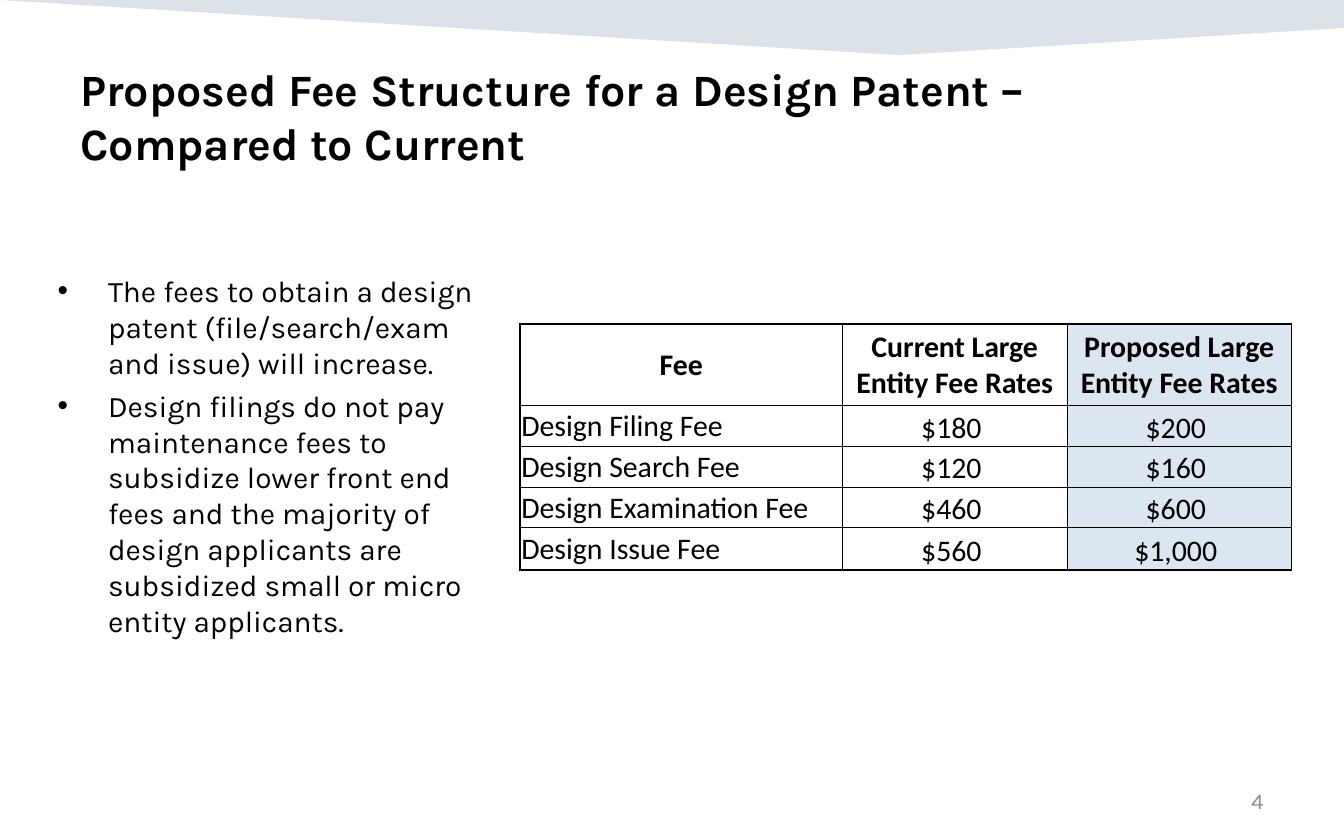
from lxml import etree
from pptx import Presentation
from pptx.dml.color import RGBColor
from pptx.enum.text import MSO_ANCHOR, PP_ALIGN
from pptx.oxml.ns import qn
from pptx.util import Pt

LEFT, CENTER, RIGHT = PP_ALIGN.LEFT, PP_ALIGN.CENTER, PP_ALIGN.RIGHT
TOP, MIDDLE, BOTTOM = MSO_ANCHOR.TOP, MSO_ANCHOR.MIDDLE, MSO_ANCHOR.BOTTOM

SLIDE_WIDTH, SLIDE_HEIGHT = 720, 450
BLACK, WHITE, GRAY, NAVY, PALE_BLUE = "000000", "FFFFFF", "8C8C8C", "164469", "DCE6F1"
TITLE_FORMAT = {"name": "Karla", "size": Pt(24), "bold": True}
BODY_FORMAT = {"name": "Karla", "size": Pt(16), "bold": False}
NUMBER_FORMAT = {"name": "Karla", "size": Pt(12), "bold": False}
HEADER_FORMAT = {"name": "Calibri", "size": Pt(16), "bold": True}
CELL_FORMAT = {**HEADER_FORMAT, "bold": False}

TITLE = "Proposed Fee Structure for a Design Patent – \vCompared to Current"
POINTS = [
    "The fees to obtain a design patent (file/search/exam and issue) will increase.",
    "Design filings do not pay maintenance fees to subsidize lower front end fees "
    "and the majority of design applicants are subsidized small or micro entity applicants.",
]
FEES = [
    ("Fee", "Current Large Entity Fee Rates", "Proposed Large Entity Fee Rates"),
    ("Design Filing Fee", "$180 ", "$200 "),
    ("Design Search Fee", "$120 ", "$160 "),
    ("Design Examination Fee", "$460 ", "$600 "),
    ("Design Issue Fee", "$560 ", "$1,000 "),
]
COLUMN_WIDTHS = [172.8, 120.24, 120.24]
ROW_HEIGHTS = [43.6, 21.9, 21.9, 21.9, 22.5]


def color(hex_value):
    return RGBColor.from_string(hex_value)


def format_paragraph(paragraph, text, font_format, font_color, align):
    paragraph.text = text
    paragraph.alignment = align
    for name, value in font_format.items():
        setattr(paragraph.font, name, value)
    paragraph.font.color.rgb = color(font_color)


def add_bullet(paragraph, indent):
    properties = paragraph._p.get_or_add_pPr()
    properties.set("marL", str(Pt(indent)))
    properties.set("indent", str(-Pt(indent)))
    etree.SubElement(properties, qn("a:buFont"), typeface="Arial")
    etree.SubElement(properties, qn("a:buChar"), char="•")


def add_text(slide, box, texts, font_format, font_color=BLACK, align=LEFT,
             anchor=TOP, bulleted=False):
    frame = slide.shapes.add_textbox(*map(Pt, box)).text_frame
    frame.word_wrap = True
    frame.vertical_anchor = anchor
    for index, text in enumerate(texts):
        paragraph = frame.add_paragraph() if index else frame.paragraphs[0]
        if index:
            paragraph.space_before = Pt(3.8)
        if bulleted:
            add_bullet(paragraph, 27)
        format_paragraph(paragraph, text, font_format, font_color, align)


def add_top_band(slide):
    builder = slide.shapes.build_freeform(0, 0)
    corners = [(SLIDE_WIDTH, 0), (SLIDE_WIDTH, 15), (481.5, 29.5)]
    builder.add_line_segments([(Pt(x), Pt(y)) for x, y in corners], close=True)
    band = builder.convert_to_shape()
    band.shadow.inherit = False
    band.line.fill.background()
    band.fill.solid()
    band.fill.fore_color.rgb = color(NAVY)
    navy = band.fill._xPr.find(".//" + qn("a:srgbClr"))
    etree.SubElement(navy, qn("a:alpha"), val="15000")


def set_borders(cell, widths):
    properties = cell._tc.get_or_add_tcPr()
    for position, (side, width) in enumerate(widths.items()):
        line = etree.Element(qn(f"a:ln{side}"), w=str(Pt(width)))
        fill = etree.SubElement(line, qn("a:solidFill"))
        etree.SubElement(fill, qn("a:srgbClr"), val=BLACK)
        properties.insert(position, line)


def fill_fee_cell(cell, text, row, column):
    is_header, is_label = row == 0, column == 0
    margins = {"margin_left": 0.72, "margin_right": 0.72, "margin_top": 0.72,
               "margin_bottom": 0}
    for name, value in margins.items():
        setattr(cell, name, Pt(value))
    cell.vertical_anchor = MIDDLE if is_header or is_label else BOTTOM
    format_paragraph(cell.text_frame.paragraphs[0], text,
                     HEADER_FORMAT if is_header else CELL_FORMAT, BLACK,
                     LEFT if is_label and not is_header else CENTER)
    cell.fill.solid()
    cell.fill.fore_color.rgb = color(PALE_BLUE if column == 2 else WHITE)
    # Outer edges are twice as thick as the inner grid
    outer = {"L": is_label, "R": column == len(COLUMN_WIDTHS) - 1,
             "T": is_header, "B": row == len(FEES) - 1}
    set_borders(cell, {side: 1 if edge else 0.5 for side, edge in outer.items()})


def add_fee_table(slide, left, top):
    size = sum(COLUMN_WIDTHS), sum(ROW_HEIGHTS)
    table = slide.shapes.add_table(len(FEES), len(COLUMN_WIDTHS),
                                   *map(Pt, (left, top, *size))).table
    table.first_row = table.horz_banding = False
    for column, width in zip(table.columns, COLUMN_WIDTHS):
        column.width = Pt(width)
    for row, height in zip(table.rows, ROW_HEIGHTS):
        row.height = Pt(height)
    for row, fees in enumerate(FEES):
        for column, text in enumerate(fees):
            fill_fee_cell(table.cell(row, column), text, row, column)


def main():
    presentation = Presentation()
    presentation.slide_width = Pt(SLIDE_WIDTH)
    presentation.slide_height = Pt(SLIDE_HEIGHT)
    slide = presentation.slides.add_slide(presentation.slide_layouts[6])

    # Band and title
    add_top_band(slide)
    add_text(slide, (36, 29.5, 648, 36.7), [TITLE], TITLE_FORMAT)

    # Slide number
    add_text(slide, (516.24, 417, 167.76, 24), ["4"], NUMBER_FORMAT, GRAY, RIGHT, MIDDLE)

    # Explanation and fee comparison
    add_text(slide, (23.8, 142.6, 250.6, 257.8), POINTS, BODY_FORMAT, bulleted=True)
    add_fee_table(slide, 278.6, 173.5)

    presentation.save("out.pptx")


if __name__ == "__main__":
    main()
